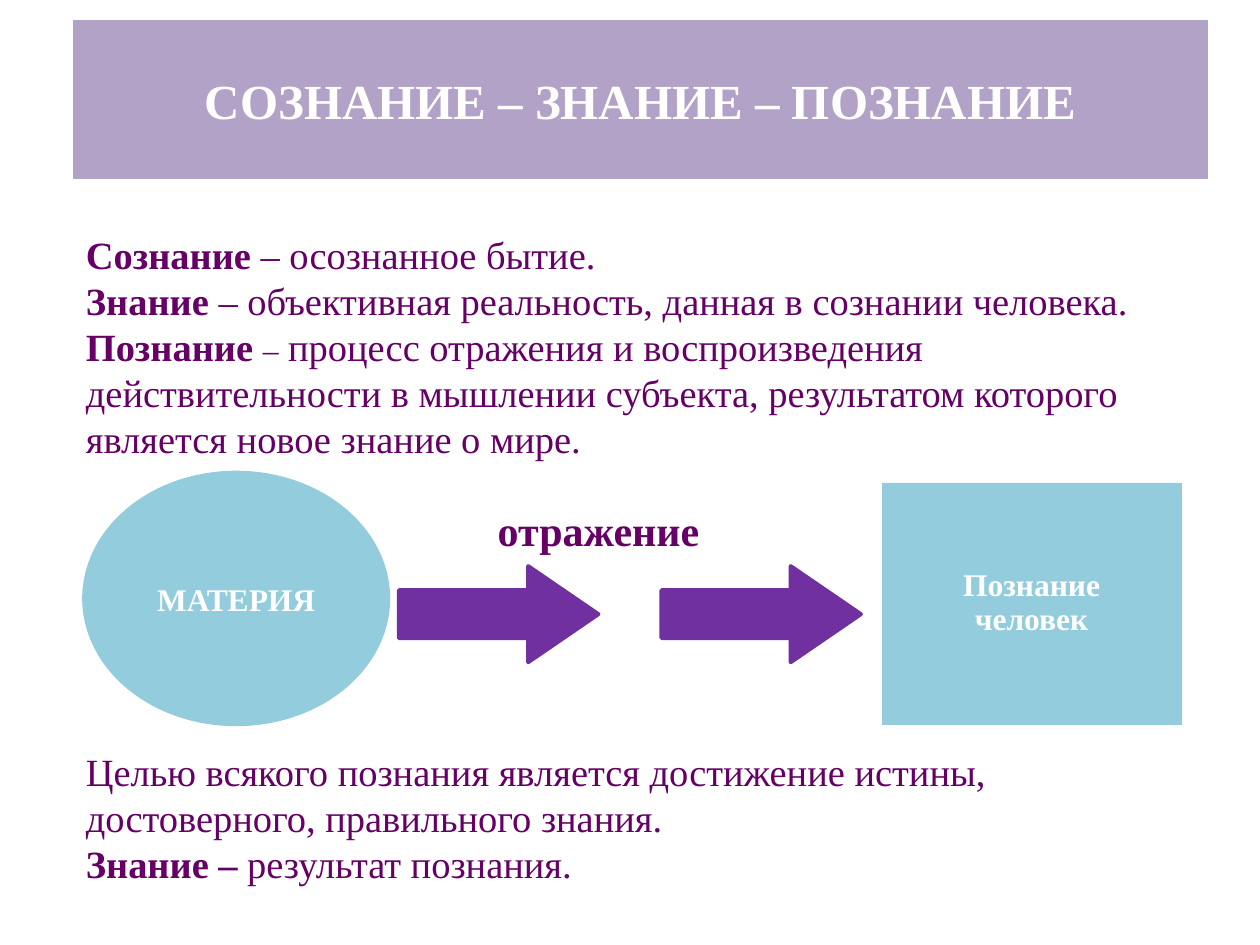
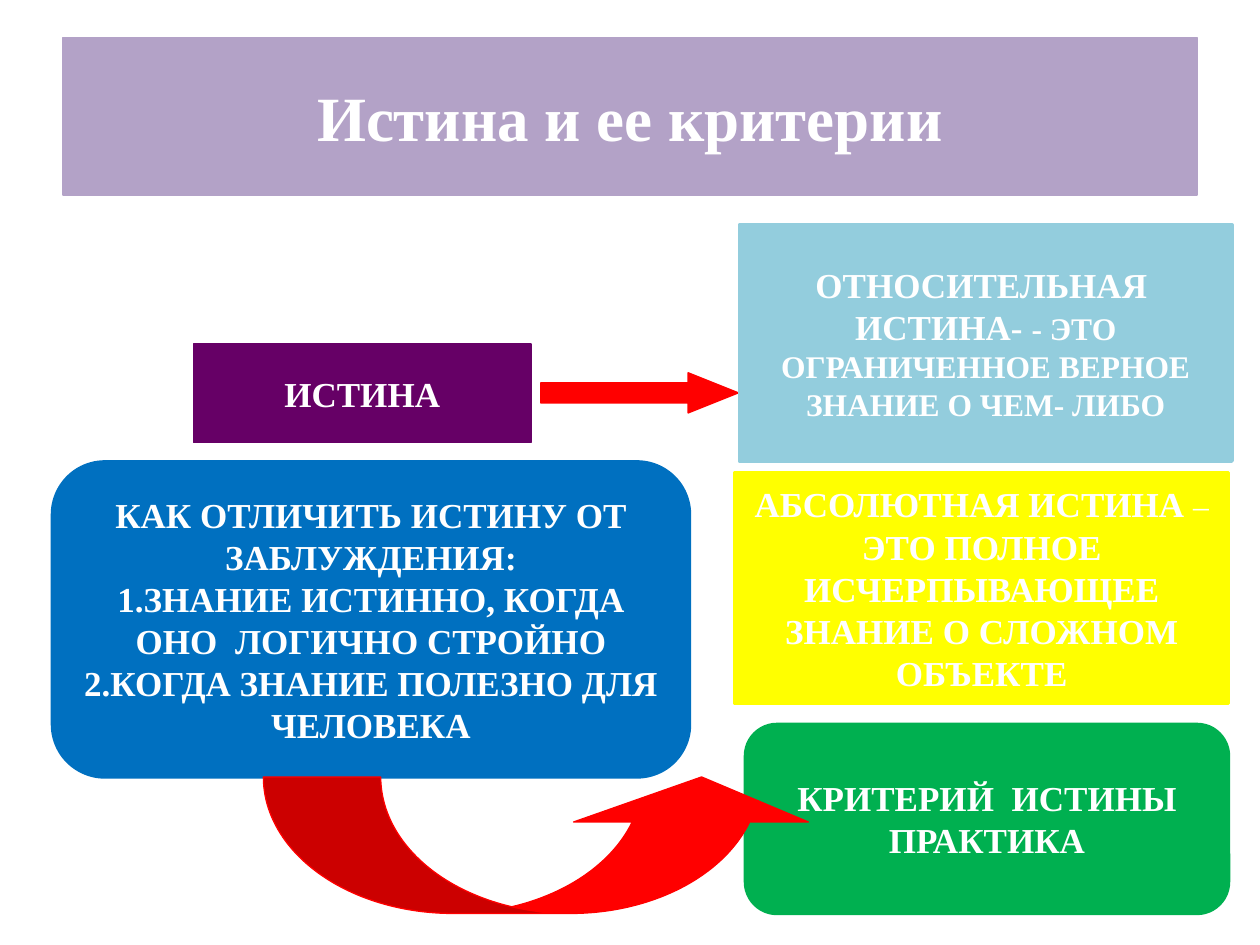
"""Build two slides on knowledge and truth, with shared title bands and blocks."""
from dataclasses import dataclass
from typing import NamedTuple

import pptx
import pptx.dml.color
import pptx.enum.shapes
import pptx.enum.text
import pptx.util

Pt = pptx.util.Pt
SHAPE = pptx.enum.shapes.MSO_SHAPE
ALIGN = pptx.enum.text.PP_ALIGN
ANCHOR = pptx.enum.text.MSO_ANCHOR

FONT = "Times New Roman"
COLORS = {
    "white": "FFFFFF",
    "band": "B3A2C7",
    "plum": "660066",
    "violet": "7030A0",
    "sky": "93CDDD",
    "red": "FF0000",
    "yellow": "FFFF00",
    "blue": "0070C0",
    "green": "00B050",
}


class Box(NamedTuple):
    left: float
    top: float
    width: float
    height: float


class Span(NamedTuple):
    text: str
    size: float
    bold: bool = True


@dataclass
class Block:
    kind: int
    box: Box
    color: str
    paragraphs: tuple = ()
    line: float = 2
    adjustments: tuple = ()
    spacing: float = 1.0
    wrap: bool = True


@dataclass
class Note:
    box: Box
    paragraphs: tuple
    align: int = ALIGN.LEFT
    anchor: int = ANCHOR.MIDDLE
    spacing: float = 1.0


def rgb(name: str):
    return pptx.dml.color.RGBColor.from_string(COLORS[name])


def lengths(box: Box) -> list:
    return [Pt(value) for value in box]


def paint(shape, color: str, line: float) -> None:
    shape.fill.solid()
    shape.fill.fore_color.rgb = rgb(color)
    shape.line.color.rgb = rgb(color)
    shape.line.width = Pt(line)


def write(frame, paragraphs: tuple, color: str, align: int, anchor: int, spacing: float = 1.0) -> None:
    frame.vertical_anchor = anchor
    for index, spans in enumerate(paragraphs):
        paragraph = frame.add_paragraph() if index else frame.paragraphs[0]
        paragraph.alignment = align
        paragraph.line_spacing = spacing
        for span in spans:
            run = paragraph.add_run()
            run.text = span.text
            run.font.name = FONT
            run.font.size = Pt(span.size)
            run.font.bold = span.bold
            run.font.color.rgb = rgb(color)


def add_titled_slide(deck, heading: str, size: float, left: float, top: float):
    slide = deck.slides.add_slide(deck.slide_layouts[5])
    title = slide.shapes.title
    title.left, title.top, title.width, title.height = lengths(Box(left, top, 648, 90))
    paint(title, "band", 0.75)
    title.text_frame.auto_size = pptx.enum.text.MSO_AUTO_SIZE.NONE
    write(title.text_frame, ((Span(heading, size),),), "white", ALIGN.CENTER, ANCHOR.MIDDLE)
    return slide


def add_block(slide, block: Block) -> None:
    shape = slide.shapes.add_shape(block.kind, *lengths(block.box))
    shape.shadow.inherit = False
    paint(shape, block.color, block.line)
    for index, value in enumerate(block.adjustments):
        shape.adjustments[index] = value
    shape.text_frame.word_wrap = block.wrap
    write(shape.text_frame, block.paragraphs, "white", ALIGN.CENTER, ANCHOR.MIDDLE, block.spacing)


def add_note(slide, note: Note) -> None:
    frame = slide.shapes.add_textbox(*lengths(note.box)).text_frame
    frame.word_wrap = True
    write(frame, note.paragraphs, "plum", note.align, note.anchor, note.spacing)


def build_knowledge(deck) -> None:
    slide = add_titled_slide(deck, "СОЗНАНИЕ – ЗНАНИЕ – ПОЗНАНИЕ", 28, 42, 12)
    reflection = Note(Box(264, 288, 156, 27), ((Span("отражение", 24),),),
                      ALIGN.CENTER, ANCHOR.TOP, 0.9)
    definitions = Note(Box(42, 127.5, 638, 140.5), (
        (Span("Сознание", 22), Span(" – осознанное бытие.", 22, False)),
        (Span("Знание ", 22),
         Span("– объективная реальность, данная в сознании человека.", 22, False)),
        (Span("Познание ", 22), Span("–", 18, False),
         Span(" процесс отражения и воспроизведения", 22, False)),
        (Span("действительности в мышлении субъекта, результатом которого "
              "является новое знание о мире.", 22, False),),
    ))
    purpose = Note(Box(42, 423.5, 642, 87), (
        (Span("Целью всякого познания является достижение истины, "
              "достоверного, правильного знания.", 22, False),),
        (Span("Знание –", 22), Span(" результат познания.", 22, False)),
    ))
    for note in (reflection, definitions, purpose):
        add_note(slide, note)

    add_block(slide, Block(SHAPE.OVAL, Box(48, 270, 174, 144), "sky",
                           ((Span("МАТЕРИЯ", 18),),)))
    for left in (228, 378):
        add_block(slide, Block(SHAPE.RIGHT_ARROW, Box(left, 323.5, 114, 55), "violet",
                               line=2.25, adjustments=(0.5, 0.73)))
    add_block(slide, Block(SHAPE.RECTANGLE, Box(504, 276, 171, 138), "sky",
                           ((Span("Познание", 18),), (Span("человек", 18),)),
                           line=0.25, spacing=0.9))


def build_truth(deck) -> None:
    slide = add_titled_slide(deck, "Истина и ее критерии", 36, 36, 21.5)
    blocks = (
        Block(SHAPE.RECTANGLE, Box(110.5, 196.5, 193, 56.5), "plum",
              ((Span("ИСТИНА", 20),),), line=0.75, wrap=False),
        Block(SHAPE.RIGHT_ARROW, Box(309, 213, 113, 23), "red",
              line=0.75, adjustments=(0.5, 1.25)),
        Block(SHAPE.RECTANGLE, Box(422.5, 128.5, 281.5, 135), "sky",
              ((Span("ОТНОСИТЕЛЬНАЯ  ИСТИНА- ", 20),
                Span("- ЭТО ОГРАНИЧЕННОЕ ВЕРНОЕ ЗНАНИЕ О ЧЕМ- ЛИБО", 18)),)),
        Block(SHAPE.RECTANGLE, Box(420, 270, 282, 132), "yellow",
              ((Span("АБСОЛЮТНАЯ ИСТИНА ", 20), Span("– ", 18, False),
                Span("ЭТО ПОЛНОЕ ИСЧЕРПЫВАЮЩЕЕ ЗНАНИЕ О СЛОЖНОМ ОБЪЕКТЕ", 20)),)),
        Block(SHAPE.ROUNDED_RECTANGLE, Box(30, 264, 364, 180), "blue",
              ((Span("КАК ОТЛИЧИТЬ ИСТИНУ ОТ ЗАБЛУЖДЕНИЯ:", 20),),
               (Span("1.ЗНАНИЕ ИСТИННО, КОГДА ОНО  ЛОГИЧНО СТРОЙНО", 20),),
               (Span("2.КОГДА ЗНАНИЕ ПОЛЕЗНО ДЛЯ ЧЕЛОВЕКА", 20),))),
        Block(SHAPE.ROUNDED_RECTANGLE, Box(426, 414, 276, 108), "green",
              ((Span("КРИТЕРИЙ  ИСТИНЫ ПРАКТИКА", 20),),)),
        Block(SHAPE.CURVED_UP_ARROW, Box(150.5, 444, 317.5, 78), "red",
              line=0.75, adjustments=(0.86, 1.72, 0.33)),
    )
    for block in blocks:
        add_block(slide, block)


def main() -> None:
    deck = pptx.Presentation()
    deck.slide_width, deck.slide_height = Pt(720), Pt(540)
    build_knowledge(deck)
    build_truth(deck)
    deck.save("out.pptx")


if __name__ == "__main__":
    main()
